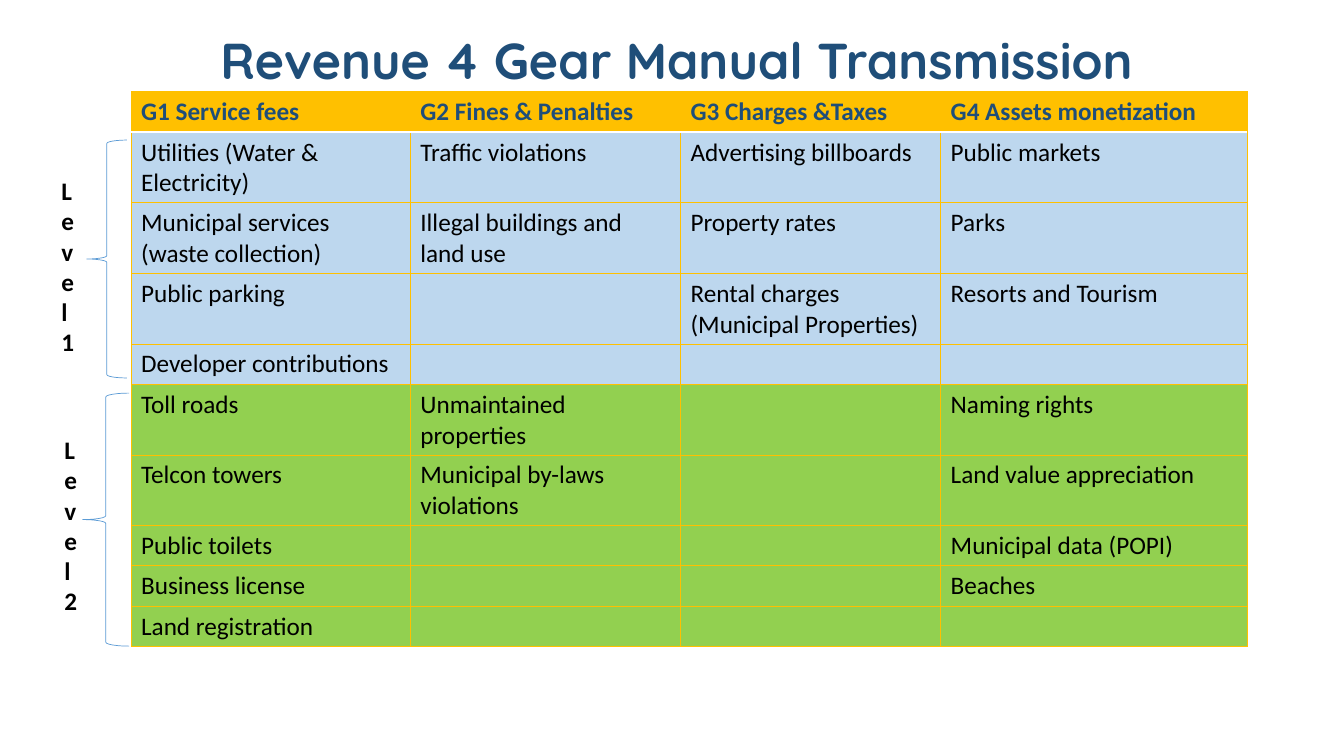
from dataclasses import dataclass

import pptx
import pptx.dml.color
import pptx.enum.shapes
import pptx.enum.text
import pptx.oxml.ns
import pptx.util
from lxml import etree
from pptx.util import Inches

RGBColor = pptx.dml.color.RGBColor
NAVY = RGBColor(0x1F, 0x4E, 0x79)
GOLD = RGBColor(0xFF, 0xC0, 0x00)
LIGHT_BLUE = RGBColor(0xBD, 0xD7, 0xEE)
GREEN = RGBColor(0x92, 0xD0, 0x50)
BRACE_BLUE = RGBColor(0x5B, 0x9B, 0xD5)
BLACK = RGBColor(0, 0, 0)
WHITE = RGBColor(0xFF, 0xFF, 0xFF)

COLUMN_WIDTHS = (2.77, 2.68, 2.58, 3.04)
ONE_LINE, TWO_LINES = 0.4, 0.7


@dataclass(frozen=True)
class Box:
    left: float
    top: float
    width: float
    height: float

    def lengths(self) -> tuple:
        return tuple(map(Inches, (self.left, self.top, self.width, self.height)))


@dataclass(frozen=True)
class RevenueRow:
    height: float
    entries: tuple[str, str, str, str]


@dataclass(frozen=True)
class Level:
    name: str
    fill: RGBColor
    label: Box
    brace: Box
    rows: tuple[RevenueRow, ...]


GEARS = RevenueRow(ONE_LINE, ("G1 Service fees", "G2 Fines & Penalties",
                              "G3 Charges &Taxes", "G4 Assets monetization"))
LEVELS = (
    Level("Level 1", LIGHT_BLUE, Box(0.51, 1.69, 0.29, 1.92), Box(0.86, 1.39, 0.4, 2.36), (
        RevenueRow(TWO_LINES, ("Utilities (Water & Electricity)", "Traffic violations",
                               "Advertising billboards", "Public markets")),
        RevenueRow(TWO_LINES, ("Municipal services (waste collection)",
                               "Illegal buildings and land use", "Property rates", "Parks")),
        RevenueRow(TWO_LINES, ("Public parking", "", "Rental charges (Municipal Properties)",
                               "Resorts and Tourism")),
        RevenueRow(ONE_LINE, ("Developer contributions", "", "", "")),
    )),
    Level("Level 2", GREEN, Box(0.54, 4.26, 0.28, 1.92), Box(0.82, 3.9, 0.46, 2.51), (
        RevenueRow(TWO_LINES, ("Toll roads", "Unmaintained properties", "", "Naming rights")),
        RevenueRow(TWO_LINES, ("Telcon towers", "Municipal by-laws violations", "",
                               "Land value appreciation")),
        RevenueRow(ONE_LINE, ("Public toilets", "", "", "Municipal data (POPI)")),
        RevenueRow(ONE_LINE, ("Business license", "", "", "Beaches")),
        RevenueRow(ONE_LINE, ("Land registration", "", "", "")),
    )),
)


def style_text(frame, font: str, size: float, color: RGBColor, bold: bool) -> None:
    for paragraph in frame.paragraphs:
        for run in paragraph.runs:
            run.font.name = font
            run.font.size = pptx.util.Pt(size)
            run.font.color.rgb = color
            run.font.bold = bold


def add_text(slide, box: Box, text: str, font: str, size: float, color: RGBColor):
    frame = slide.shapes.add_textbox(*box.lengths()).text_frame
    frame.word_wrap = True
    frame.auto_size = pptx.enum.text.MSO_AUTO_SIZE.SHAPE_TO_FIT_TEXT
    frame.text = text
    style_text(frame, font, size, color, True)
    return frame


def add_border(cell, side: str, color: RGBColor, points: float) -> None:
    """Add one cell border; call in the order L, R, T, B and before the fill."""
    qn = pptx.oxml.ns.qn
    line = etree.SubElement(cell._tc.get_or_add_tcPr(), qn(f"a:ln{side}"),
                            w=str(pptx.util.Pt(points)))
    solid = etree.SubElement(line, qn("a:solidFill"))
    etree.SubElement(solid, qn("a:srgbClr"), val=str(color))


def add_revenue_table(slide) -> None:
    styled_rows = [(GEARS, GOLD)]
    styled_rows += [(row, level.fill) for level in LEVELS for row in level.rows]
    box = Box(1.3, 0.91, sum(COLUMN_WIDTHS), sum(row.height for row, _ in styled_rows))
    table = slide.shapes.add_table(len(styled_rows), len(COLUMN_WIDTHS), *box.lengths()).table
    table.first_row = table.horz_banding = False
    for column, width in zip(table.columns, COLUMN_WIDTHS):
        column.width = Inches(width)

    for index, (row, fill) in enumerate(styled_rows):
        table.rows[index].height = Inches(row.height)
        is_header = index == 0
        for cell, entry in zip(table.rows[index].cells, row.entries):
            for side in "LRTB":
                under_header = (index, side) in ((0, "B"), (1, "T"))
                add_border(cell, side, *((WHITE, 1) if under_header else (GOLD, 0.5)))
            cell.fill.solid()
            cell.fill.fore_color.rgb = fill
            if entry:
                cell.text_frame.text = entry
                style_text(cell.text_frame, "Calibri", 18,
                           NAVY if is_header else BLACK, is_header)


def add_level_marker(slide, level: Level) -> None:
    brace = slide.shapes.add_shape(pptx.enum.shapes.MSO_SHAPE.LEFT_BRACE,
                                   *level.brace.lengths())
    brace.shadow.inherit = False
    brace.fill.background()
    brace.line.color.rgb = BRACE_BLUE
    brace.line.width = pptx.util.Pt(0.5)
    add_text(slide, level.label, level.name, "Calibri", 18, BLACK)


def main() -> None:
    deck = pptx.Presentation()
    deck.slide_width, deck.slide_height = Inches(13.33), Inches(7.5)
    slide = deck.slides.add_slide(deck.slide_layouts[6])
    title = add_text(slide, Box(1.19, 0.24, 11.18, 0.71),
                     "Revenue 4 Gear Manual Transmission ", "Quicksand", 36, NAVY)
    title.paragraphs[0].alignment = pptx.enum.text.PP_ALIGN.CENTER
    add_revenue_table(slide)
    for level in LEVELS:
        add_level_marker(slide, level)
    deck.save("out.pptx")


if __name__ == "__main__":
    main()
